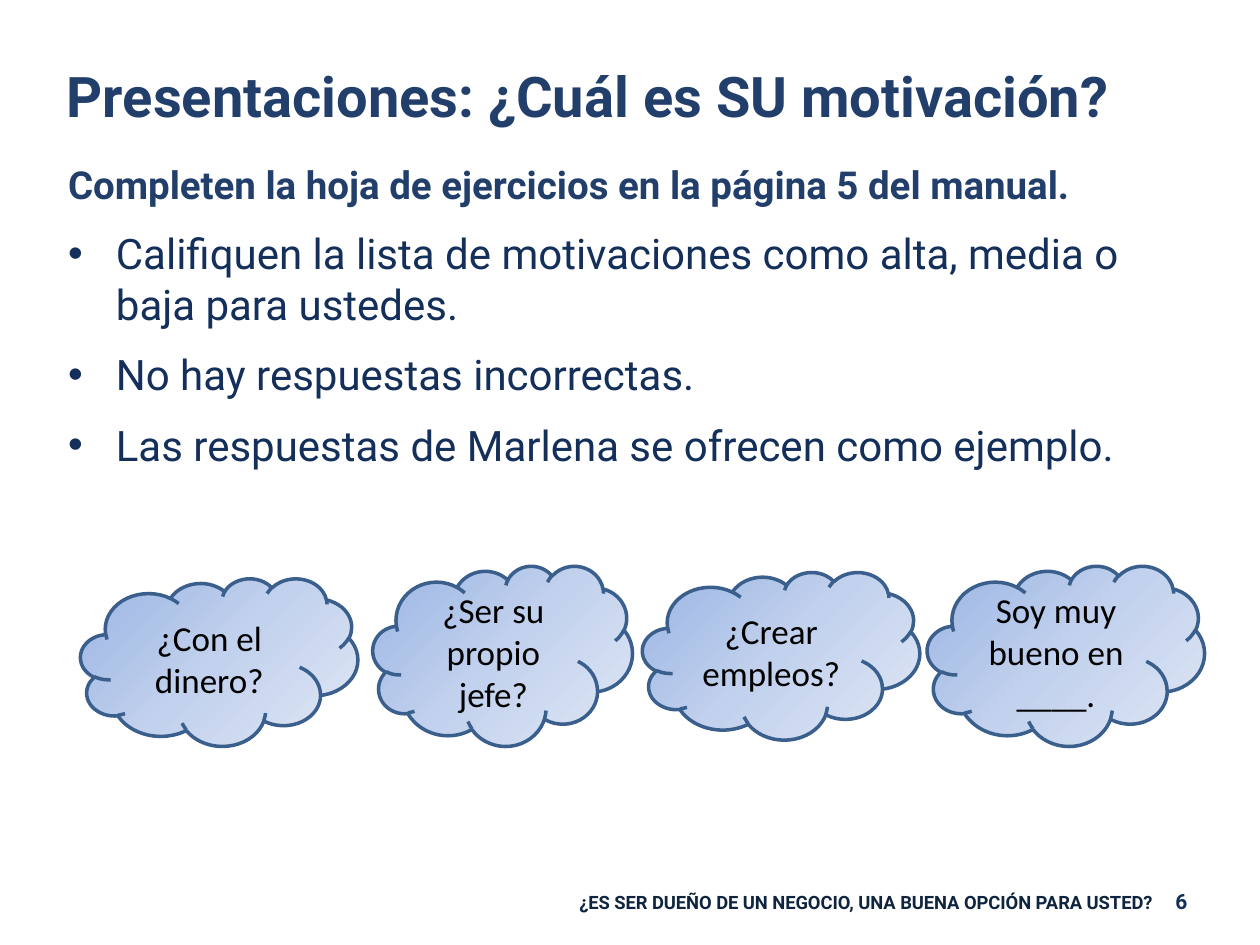
import copy

import pptx
import pptx.dml.color
import pptx.enum.shapes
import pptx.enum.text
import pptx.oxml.ns
import pptx.util
from lxml import etree

Inches, Pt = pptx.util.Inches, pptx.util.Pt
ALIGN, ANCHOR = pptx.enum.text.PP_ALIGN, pptx.enum.text.MSO_ANCHOR

COLORS = {
    "heading": "223F6B", "body": "132F5A", "footer": "0F243E", "thought": "000000",
    "outline": "3A5F8C", "start": "9AB5E4", "middle": "C2D1ED", "end": "E1E8F5",
}
TITLE = "Presentaciones: ¿Cuál es SU motivación?"
TASK = "Completen la hoja de ejercicios en la página 5 del manual."
INSTRUCTIONS = [
    "Califiquen la lista de motivaciones como alta, media o baja para ustedes.",
    "No hay respuestas incorrectas.",
    "Las respuestas de Marlena se ofrecen como ejemplo.",
]
THOUGHTS = [
    ("¿Con el dinero?", (0.64, 4.59, 2.2, 1.33)),
    ("¿Ser su propio jefe?", (2.96, 4.49, 2.06, 1.43)),
    ("¿Crear empleos?", (5.1, 4.54, 2.2, 1.33)),
    ("Soy muy bueno en ____.", (7.36, 4.49, 2.2, 1.43)),
]
FOOTER = "¿ES SER DUEÑO DE UN NEGOCIO, UNA BUENA OPCIÓN PARA USTED?"


def rgb(name):
    return pptx.dml.color.RGBColor.from_string(COLORS[name])


class SlideBuilder:
    font = "Roboto"
    thought_font = "Calibri"

    def __init__(self, slide):
        self.slide = slide

    def style(self, paragraph, size, color, bold=False, align=ALIGN.LEFT, font=None):
        paragraph.alignment = align
        for run in paragraph.runs:
            run.font.name = font or self.font
            run.font.size = Pt(size)
            run.font.bold = bold
            run.font.color.rgb = rgb(color)

    def place(self, shape, box):
        shape.left, shape.top, shape.width, shape.height = map(Inches, box)

    def set_bullet(self, paragraph, char=None, indent=0):
        """Give the paragraph a hanging bullet, or none without a char."""
        properties = paragraph._p.get_or_add_pPr()
        properties.set("marL", str(Inches(indent)))
        properties.set("indent", str(-Inches(indent)))
        tag = "a:buChar" if char else "a:buNone"
        bullet = etree.SubElement(properties, pptx.oxml.ns.qn(tag))
        if char:
            bullet.set("char", char)

    def title(self, text, box):
        title = self.slide.shapes.title
        self.place(title, box)
        title.text_frame.text = text
        title.text_frame.vertical_anchor = ANCHOR.MIDDLE
        title.text_frame.auto_size = pptx.enum.text.MSO_AUTO_SIZE.NONE
        self.style(title.text_frame.paragraphs[0], 32, "heading", bold=True)

    def body(self, lead, items, box):
        body = self.slide.placeholders[1]
        self.place(body, box)
        frame = body.text_frame
        frame.auto_size = pptx.enum.text.MSO_AUTO_SIZE.NONE
        frame.text = "\n".join([lead, *items])
        for index, paragraph in enumerate(frame.paragraphs):
            paragraph.space_before = Pt(5.5 if index else 0)
            paragraph.space_after = Pt(6)
            if index:
                self.set_bullet(paragraph, "•", 0.38)
                self.style(paragraph, 24, "body")
            else:
                self.set_bullet(paragraph)
                self.style(paragraph, 22, "heading", bold=True)

    def cloud(self, text, box):
        cloud = self.slide.shapes.add_shape(
            pptx.enum.shapes.MSO_SHAPE.CLOUD, *map(Inches, box))
        cloud.shadow.inherit = False
        self.shade(cloud.fill)
        cloud.line.color.rgb = rgb("outline")
        cloud.line.width = Pt(2)
        cloud.text_frame.text = text
        cloud.text_frame.word_wrap = True
        cloud.text_frame.vertical_anchor = ANCHOR.MIDDLE
        self.style(cloud.text_frame.paragraphs[0], 20, "thought",
                   align=ALIGN.CENTER, font=self.thought_font)

    def shade(self, fill):
        """Apply a three-stop diagonal gradient, dark at the top left."""
        fill.gradient()
        fill.gradient_angle = 315
        first = fill.gradient_stops[0]._gs
        first.addnext(copy.deepcopy(first))
        stops = zip(fill.gradient_stops, ("start", "middle", "end"), (0, 0.5, 1))
        for stop, color, position in stops:
            stop.color.rgb = rgb(color)
            stop.position = position

    def label(self, text, box, size, color, align=ALIGN.LEFT, wrap=True):
        label = self.slide.shapes.add_textbox(*map(Inches, box))
        label.text_frame.text = text
        label.text_frame.word_wrap = wrap
        self.style(label.text_frame.paragraphs[0], size, color, bold=True, align=align)


def main():
    deck = pptx.Presentation()
    deck.slide_width, deck.slide_height = Inches(10), Inches(7.5)
    builder = SlideBuilder(deck.slides.add_slide(deck.slide_layouts[1]))
    builder.label(FOOTER, (3.56, 7.02, 5.69, 0.28), 10.5, "footer", ALIGN.RIGHT)
    builder.label("6", (9.23, 7, 0.41, 0.3), 12, "body", wrap=False)
    builder.title(TITLE, (0.43, 0.42, 9.46, 0.67))
    builder.body(TASK, INSTRUCTIONS, (0.44, 1.23, 8.74, 3.12))
    for text, box in THOUGHTS:
        builder.cloud(text, box)
    deck.save("out.pptx")


if __name__ == "__main__":
    main()
